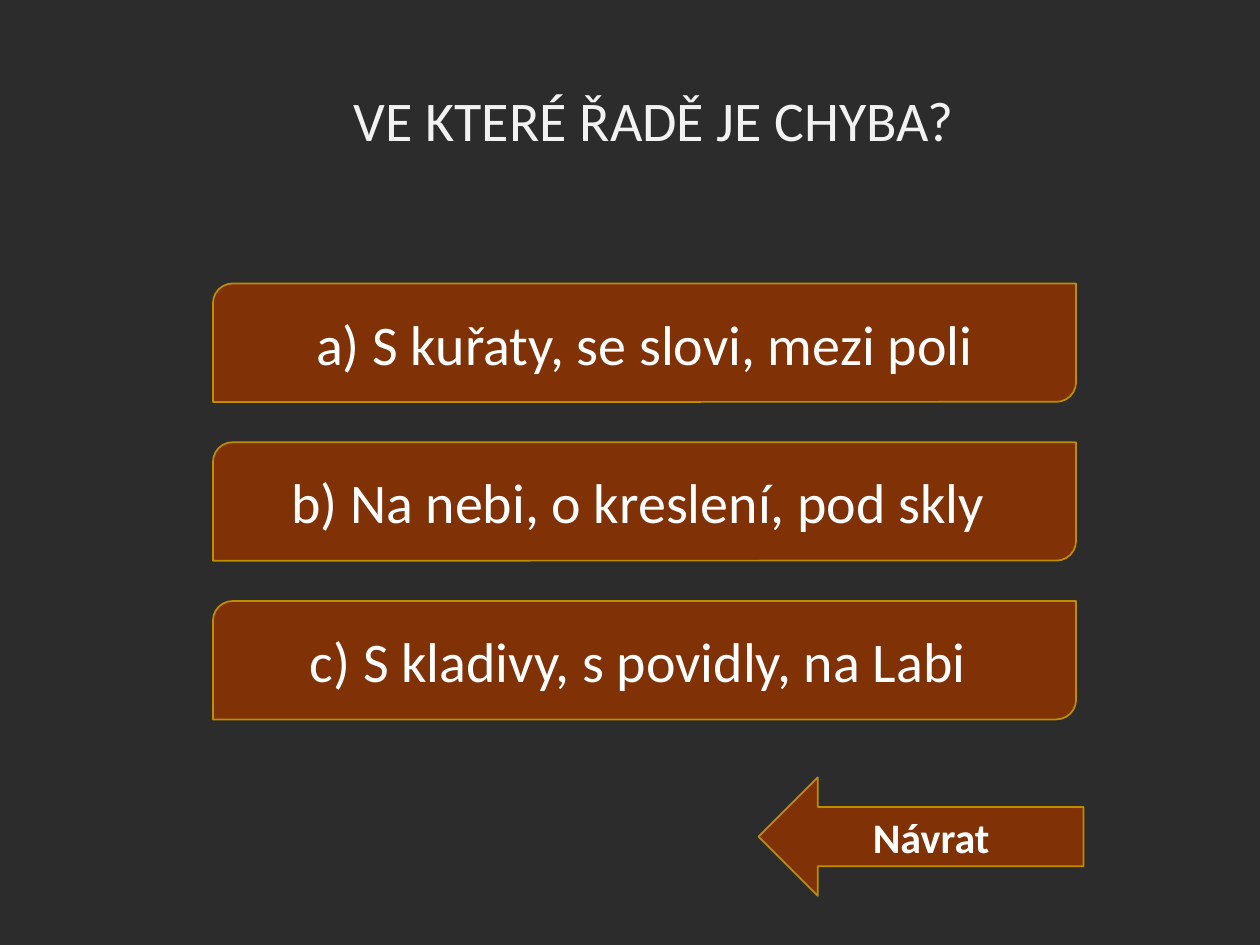
from pptx import Presentation
from pptx import util as u
from pptx.dml.color import RGBColor
from pptx.enum import shapes, text

TITLE = "VE KTERÉ ŘADĚ JE CHYBA? "
ANSWERS = [
    "a) S kuřaty, se slovi, mezi poli",
    "b) Na nebi, o kreslení, pod skly ",
    "c) S kladivy, s povidly, na Labi ",
]
RETURN_LABEL = "Návrat "
COLORS = {
    "background": "2C2C2C",
    "title": "F2F2F2",
    "button": "803106",
    "border": "BD8E00",
    "label": "FFFFFF",
}
FONT = "Calibri"
TITLE_BOX = (1.14, 0.36, 8.2, 1.25)
ANSWER_LEFT, ANSWER_TOP, ANSWER_WIDTH = 1.69, 2.25, 6.85
BUTTON_HEIGHT, ROW_STEP = 0.94, 1.26
RETURN_BOX = (6.02, 6.17, 2.58, BUTTON_HEIGHT)


def color(name):
    return RGBColor.from_string(COLORS[name])


def write(shape, content, *, size=32, color_name="label", bold=False, spacing=None):
    frame = shape.text_frame
    frame.word_wrap = True
    frame.vertical_anchor = text.MSO_ANCHOR.MIDDLE
    paragraph = frame.paragraphs[0]
    paragraph.alignment = text.PP_ALIGN.CENTER
    paragraph.line_spacing = spacing
    run = paragraph.add_run()
    run.text = content
    run.font.name = FONT
    run.font.size = u.Pt(size)
    run.font.bold = bold
    run.font.color.rgb = color(color_name)


def add_button(slide, kind, box, content, **text_format):
    shape = slide.shapes.add_shape(kind, *map(u.Inches, box))
    shape.shadow.inherit = False
    shape.fill.solid()
    shape.fill.fore_color.rgb = color("button")
    shape.line.color.rgb = color("border")
    shape.line.width = u.Pt(1)
    write(shape, content, **text_format)


def main():
    presentation = Presentation()
    presentation.slide_width, presentation.slide_height = u.Inches(10), u.Inches(7.5)
    slide = presentation.slides.add_slide(presentation.slide_layouts[6])
    slide.background.fill.solid()
    slide.background.fill.fore_color.rgb = color("background")

    title = slide.shapes.add_textbox(*map(u.Inches, TITLE_BOX))
    write(title, TITLE, color_name="title", spacing=0.85)

    for row, answer in enumerate(ANSWERS):
        box = (ANSWER_LEFT, ANSWER_TOP + row * ROW_STEP, ANSWER_WIDTH, BUTTON_HEIGHT)
        add_button(slide, shapes.MSO_SHAPE.ROUND_2_DIAG_RECTANGLE, box, answer)

    add_button(slide, shapes.MSO_SHAPE.LEFT_ARROW, RETURN_BOX, RETURN_LABEL,
               size=24, bold=True)
    presentation.save("out.pptx")


if __name__ == "__main__":
    main()
